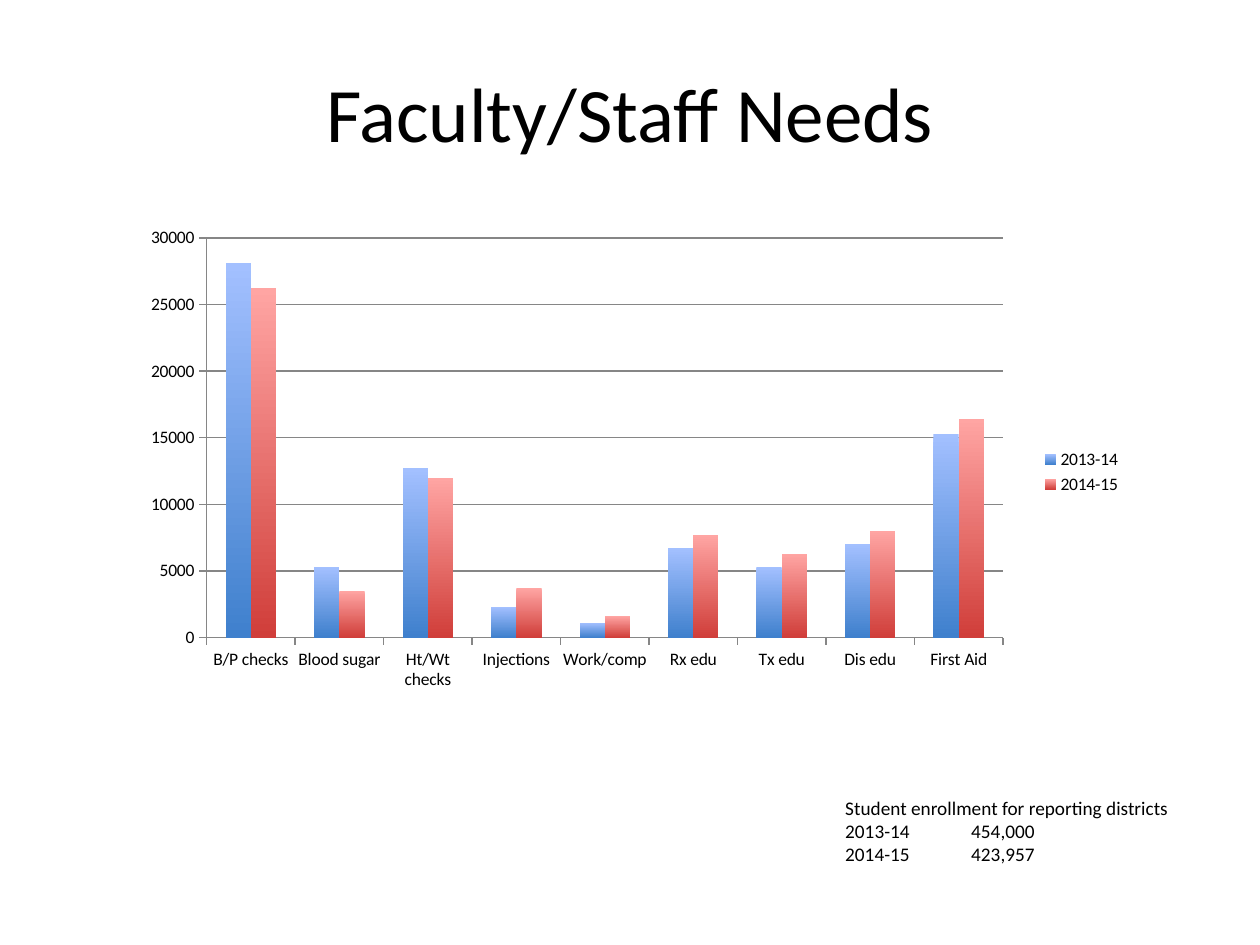
"""Build the Faculty/Staff Needs slide with its clustered column chart."""
from lxml import etree
from pptx import Presentation
from pptx.chart.data import CategoryChartData
from pptx.dml.color import RGBColor
from pptx.enum import chart as c, text as t
from pptx.oxml import ns
from pptx.util import Pt


def color(value):
    return RGBColor.from_string(value)


def style(font, size):
    font.name, font.size, font.color.rgb = "Calibri", Pt(size), color("000000")


deck = Presentation()
deck.slide_width, deck.slide_height = Pt(720), Pt(540)
page = deck.slides.add_slide(deck.slide_layouts[5])

title = page.shapes.title
title.left, title.top, title.width, title.height = Pt(72), Pt(18.72), Pt(576), Pt(90.72)
title.text_frame.text = "Faculty/Staff Needs"
title.text_frame.vertical_anchor = t.MSO_ANCHOR.MIDDLE
heading = title.text_frame.paragraphs[0]
heading.alignment = t.PP_ALIGN.CENTER
style(heading.font, 44)

needs = CategoryChartData()
needs.categories = ["B/P checks", "Blood sugar", "Ht/Wt checks", "Injections", "Work/comp",
                    "Rx edu", "Tx edu", "Dis edu", "First Aid"]
needs.add_series("2013-14", [28100, 5300, 12700, 2300, 1100, 6700, 5300, 7000, 15300])
needs.add_series("2014-15", [26200, 3500, 12000, 3700, 1600, 7700, 6300, 8000, 16400])
chart = page.shapes.add_chart(c.XL_CHART_TYPE.COLUMN_CLUSTERED, Pt(72), Pt(130.32),
                              Pt(576), Pt(278.64), needs).chart
style(chart.font, 10)
chart.has_title = False
chart.has_legend = True
chart.legend.position = c.XL_LEGEND_POSITION.RIGHT
chart.legend.include_in_layout = False

plot = chart.plots[0]
plot.vary_by_categories = False
plot.gap_width, plot.overlap = 150, 0
for series, shades in zip(plot.series, [("A3C0FF", "3F80CD"), ("FFA5A3", "D03E3A")]):
    fill = series.format.fill
    fill.gradient()
    fill.gradient_angle = 270
    for stop, shade, position in zip(fill.gradient_stops, shades, (0, 1)):
        stop.color.rgb, stop.position = color(shade), position

values = chart.value_axis
values.minimum_scale, values.maximum_scale, values.major_unit = 0, 30000, 5000
values.has_major_gridlines = True
for axis in (chart.category_axis, values):
    axis.major_tick_mark = c.XL_TICK_MARK.CROSS if axis is values else c.XL_TICK_MARK.OUTSIDE
    axis.minor_tick_mark = c.XL_TICK_MARK.NONE
    axis.major_tick_mark = c.XL_TICK_MARK.OUTSIDE
for line in (chart.category_axis.format.line, values.format.line,
             values.major_gridlines.format.line):
    line.color.rgb, line.width = color("868686"), Pt(0.75)

area = chart.plots[0]._element.getparent()
for old in area.findall(ns.qn("c:layout")):
    area.remove(old)
layout = etree.Element(ns.qn("c:layout"))
manual = etree.SubElement(layout, ns.qn("c:manualLayout"))
for tag, value in [("layoutTarget", "inner"), ("xMode", "edge"), ("yMode", "edge"),
                   ("x", "0.08"), ("y", "0.02"), ("w", "0.79"), ("h", "0.82")]:
    etree.SubElement(manual, ns.qn(f"c:{tag}")).set("val", value)
area.insert(0, layout)

box = page.shapes.add_textbox(Pt(475.92), Pt(451.44), Pt(211.68), Pt(47.52))
frame = box.text_frame
frame.word_wrap = False
frame.auto_size = t.MSO_AUTO_SIZE.SHAPE_TO_FIT_TEXT
frame.text = "Student enrollment for reporting districts\n2013-14\t454,000\n2014-15\t423,957"
for para in frame.paragraphs:
    style(para.font, 11)

deck.save("out.pptx")
